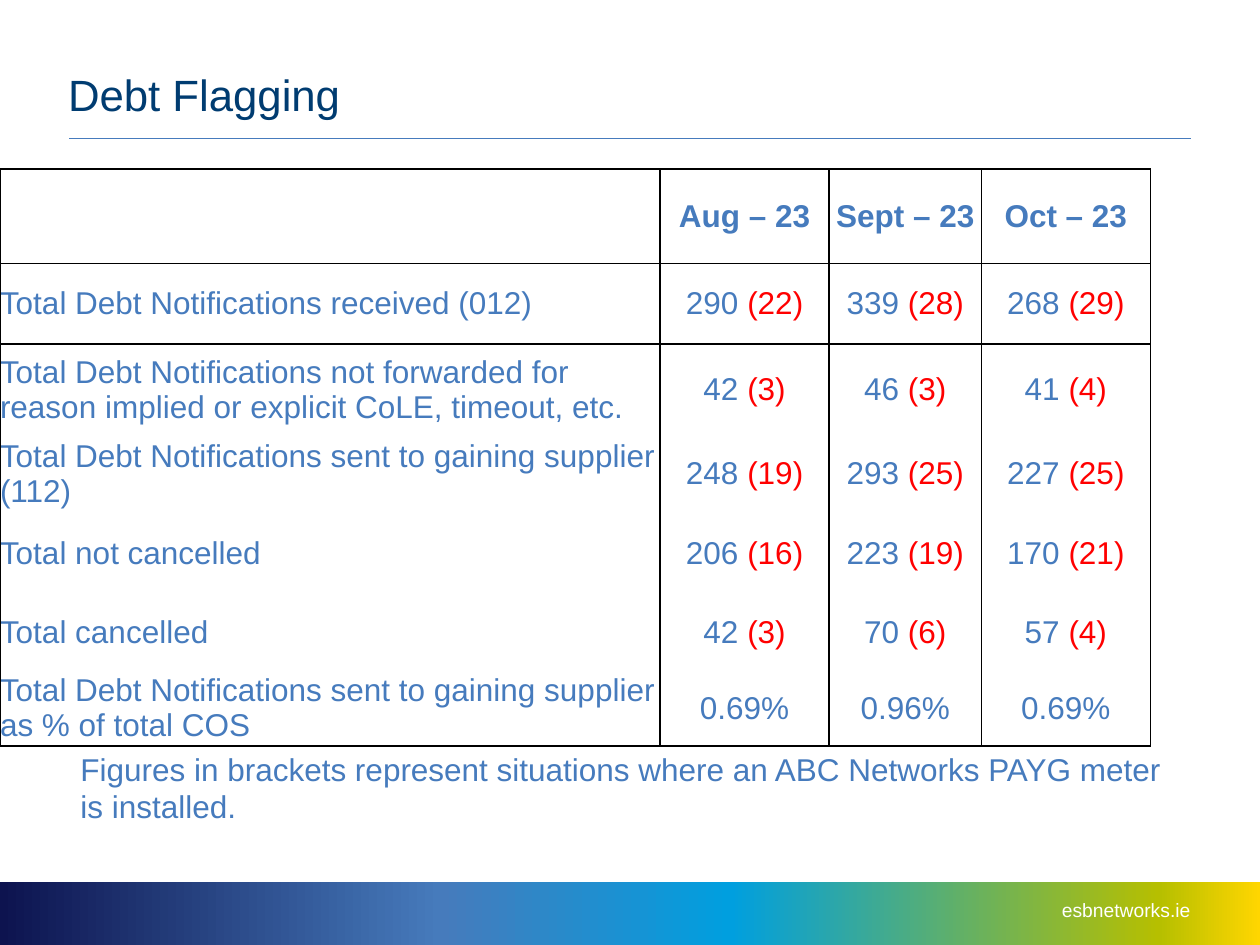
import pptx
import pptx.util
import pptx.dml.color
import pptx.enum.shapes
import pptx.enum.text
import pptx.oxml
import pptx.oxml.ns
from lxml import etree

Inches, Pt = pptx.util.Inches, pptx.util.Pt
RGBColor = pptx.dml.color.RGBColor
PP_ALIGN, MSO_ANCHOR = pptx.enum.text.PP_ALIGN, pptx.enum.text.MSO_ANCHOR
qn = pptx.oxml.ns.qn

BLUE = RGBColor(0x46, 0x7B, 0xBD)
NAVY = RGBColor(0x00, 0x3C, 0x71)
RED = RGBColor(0xFF, 0x00, 0x00)
BLACK = RGBColor(0x00, 0x00, 0x00)
WHITE = RGBColor(0xFF, 0xFF, 0xFF)
BAND_STOPS = [
    (0, RGBColor(0x0D, 0x13, 0x4F)),
    (35, RGBColor(0x46, 0x7B, 0xBC)),
    (58, RGBColor(0x00, 0x9F, 0xDF)),
    (92, RGBColor(0xB6, 0xBF, 0x00)),
    (100, RGBColor(0xFF, 0xD6, 0x00)),
]
NO_STYLE = "{2D5ABB26-0587-4C30-8999-92F81FD0307C}"

COL_WIDTHS = [5.24, 1.34, 1.21, 1.34]
ROW_HEIGHTS = [0.75, 0.64, 0.73, 0.59, 0.66, 0.6, 0.59]
ROWS = [
    ["", "Aug – 23", "Sept – 23", "Oct – 23"],
    ["Total Debt Notifications received (012)", "290 (22)", "339 (28)", "268 (29)"],
    ["Total Debt Notifications not forwarded for reason implied or explicit CoLE, "
     "timeout, etc.", "42 (3)", "46 (3)", "41 (4)"],
    ["Total Debt Notifications sent to gaining supplier (112)",
     "248 (19)", "293 (25)", "227 (25)"],
    ["Total not cancelled", "206 (16)", "223 (19)", "170 (21)"],
    ["Total cancelled", "42 (3)", "70 (6)", "57 (4)"],
    ["Total Debt Notifications sent to gaining supplier as % of total COS",
     "0.69%", "0.96%", "0.69%"],
]


def add_run(p, text, size, color, bold=False):
    r = p.add_run()
    r.text = text
    r.font.name, r.font.size, r.font.bold = "Arial", Pt(size), bold
    r.font.color.rgb = color


def add_text(s, box, text, size, color, left=0.1, right=0.1):
    """Add a wrapped text box and return its paragraph."""
    tf = s.shapes.add_textbox(*map(Inches, box)).text_frame
    tf.word_wrap = True
    tf.margin_left, tf.margin_right = Inches(left), Inches(right)
    p = tf.paragraphs[0]
    add_run(p, text, size, color)
    return p


def add_footer_band(s):
    band = s.shapes.add_shape(pptx.enum.shapes.MSO_SHAPE.RECTANGLE,
                              Inches(0), Inches(7), Inches(10), Inches(0.5))
    band.shadow.inherit = False
    band.line.fill.background()
    band.fill.gradient()
    band.fill.gradient_angle = 0
    stops = band._element.spPr.find(qn("a:gradFill")).find(qn("a:gsLst"))
    for stop in list(stops):
        stops.remove(stop)
    for position, color in BAND_STOPS:
        stop = etree.SubElement(stops, qn("a:gs"), pos=str(position * 1000))
        etree.SubElement(stop, qn("a:srgbClr"), val=str(color))


def add_title_rule(s):
    rule = s.shapes.add_connector(pptx.enum.shapes.MSO_CONNECTOR.STRAIGHT,
                                  Inches(0.55), Inches(1.1), Inches(9.45), Inches(1.1))
    rule.line.color.rgb = BLUE
    rule.line.width = Pt(1)
    etree.SubElement(rule._element.spPr, qn("a:effectLst"))


def set_borders(cell, sides):
    tcPr = cell._tc.get_or_add_tcPr()
    for side in sides:
        line = etree.SubElement(tcPr, qn("a:ln" + side), w=str(Pt(1)))
        fill = etree.SubElement(line, qn("a:solidFill"))
        etree.SubElement(fill, qn("a:srgbClr"), val=str(BLACK))


def fill_cell(cell, text, header, label):
    """Write a cell; figures in brackets after a count are red."""
    cell.margin_left = cell.margin_right = cell.margin_top = cell.margin_bottom = 0
    cell.vertical_anchor = MSO_ANCHOR.MIDDLE
    cell.fill.background()
    if not text:
        return
    p = cell.text_frame.paragraphs[0]
    p.alignment = PP_ALIGN.LEFT if label else PP_ALIGN.CENTER
    count, bracket, rest = (text, "", "") if label else text.partition("(")
    add_run(p, count, 18, BLUE, header)
    if bracket:
        add_run(p, bracket + rest, 18, RED)


def add_debt_table(s):
    frame = s.shapes.add_table(len(ROWS), len(COL_WIDTHS), Inches(0), Inches(1.34),
                               Inches(sum(COL_WIDTHS)), Inches(sum(ROW_HEIGHTS)))
    table = frame.table
    table.first_row = table.horz_banding = False
    table._tbl.tblPr.find(qn("a:tableStyleId")).text = NO_STYLE
    for column, width in zip(table.columns, COL_WIDTHS):
        column.width = Inches(width)
    for row, height in zip(table.rows, ROW_HEIGHTS):
        row.height = Inches(height)
    borders = {0: "LRTB", 1: "LRT", len(ROWS) - 1: "LRB"}
    for i, values in enumerate(ROWS):
        for j, text in enumerate(values):
            cell = table.cell(i, j)
            set_borders(cell, borders.get(i, "LR"))
            fill_cell(cell, text, header=i == 0, label=j == 0)


def main():
    prs = pptx.Presentation()
    prs.slide_width, prs.slide_height = Inches(10), Inches(7.5)
    s = prs.slides.add_slide(prs.slide_layouts[6])
    add_footer_band(s)
    site = add_text(s, (7.61, 7.08, 1.84, 0.29), "esbnetworks.ie", 11, WHITE, right=0)
    site.alignment = PP_ALIGN.RIGHT
    add_title_rule(s)
    title = add_text(s, (0.54, 0.24, 7.45, 0.78), "Debt Flagging", 25, NAVY, 0, 0)
    title.line_spacing = Pt(48)
    add_debt_table(s)
    add_text(s, (0.54, 5.9, 9, 0.71),
             "Figures in brackets represent situations where an ABC Networks PAYG "
             "meter is installed.", 18, BLUE)
    prs.save("out.pptx")


if __name__ == "__main__":
    main()
